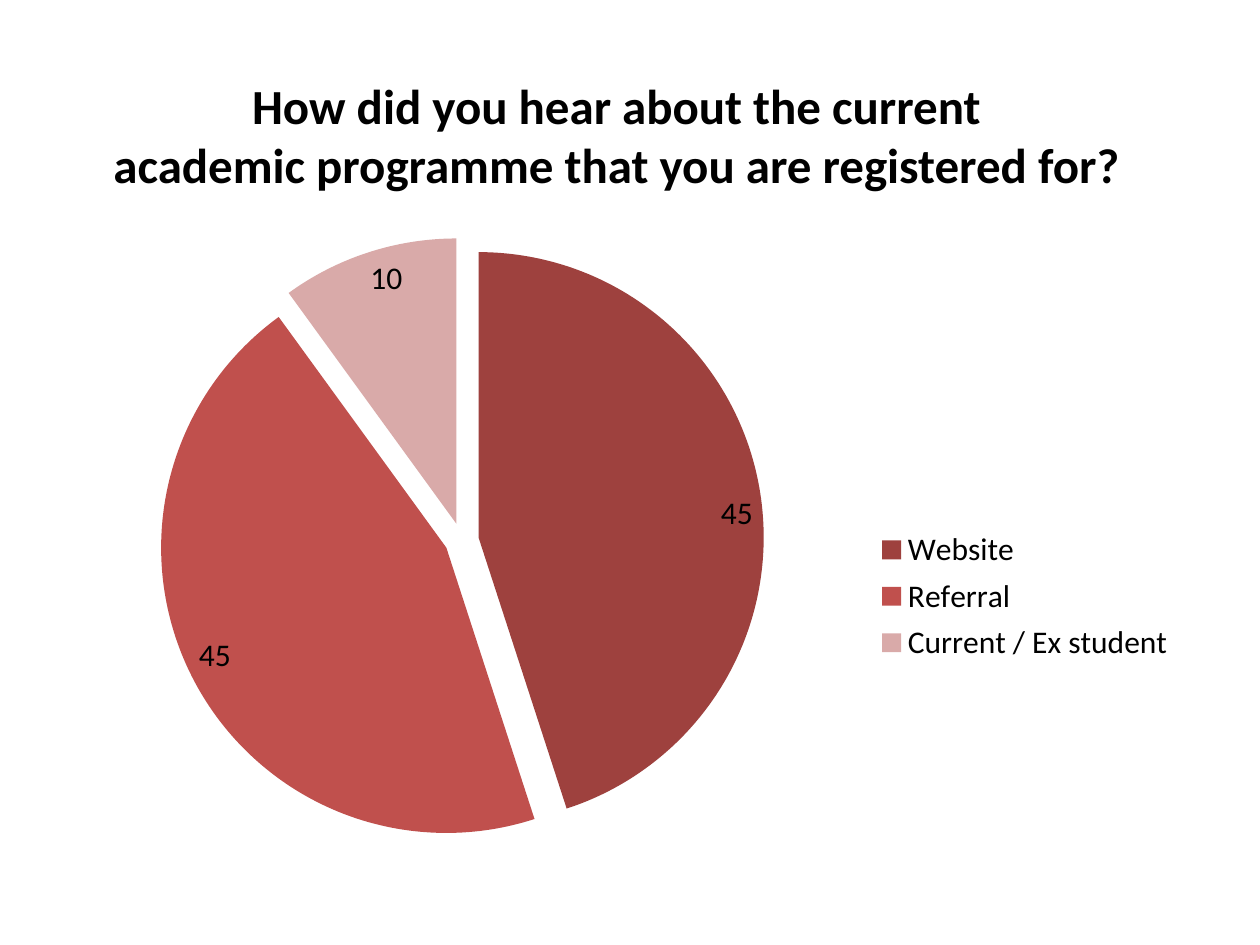
from lxml.etree import SubElement
from pptx import Presentation
from pptx.chart.data import CategoryChartData
from pptx.dml.color import RGBColor
from pptx.enum.chart import XL_CHART_TYPE as ChartType
from pptx.enum.chart import XL_LABEL_POSITION as LabelPosition
from pptx.enum.chart import XL_LEGEND_POSITION as LegendPosition
from pptx.enum.text import MSO_ANCHOR as Anchor
from pptx.enum.text import MSO_AUTO_SIZE as AutoSize
from pptx.enum.text import PP_ALIGN as Align
from pptx.oxml.ns import qn
from pptx.util import Pt

QUESTION = [
    "How did you hear about the current ",
    "academic programme that you are registered for? ",
]
ANSWERS = [
    ("Website", 45, "9E413E"),
    ("Referral", 45, "C0504D"),
    ("Current / Ex student", 10, "D9AAA9"),
]
FONT = "Calibri"
BLACK = "000000"
EXPLOSION = 6

# Left, top, width, height in points
TITLE_BOX = (54, 39.6, 602.6, 74.9)
CHART_BOX = (35.3, 109.4, 643.7, 402.5)
# The same as fractions of the chart
PIE_AREA = (0.1, 0.09, 0.51, 0.81)
LEGEND_AREA = (0.72, 0.47, 0.27, 0.21)


def color(hex_value):
    return RGBColor.from_string(hex_value)


def style_font(font, size, bold=False):
    font.name = FONT
    font.size = Pt(size)
    font.bold = bold
    font.color.rgb = color(BLACK)


def set_layout(parent, area, inner=False):
    """Fix the place of a chart part, given as fractions of the chart."""
    layout = parent.find(qn("c:layout"))
    if layout is None:
        layout = SubElement(parent, qn("c:layout"))
        overlay = parent.find(qn("c:overlay"))
        if overlay is not None:
            overlay.addprevious(layout)
        else:
            parent.insert(0, layout)
    for child in list(layout):
        layout.remove(child)
    manual = SubElement(layout, qn("c:manualLayout"))
    settings = [("layoutTarget", "inner")] if inner else []
    settings += [("xMode", "edge"), ("yMode", "edge")]
    settings += zip("xywh", area)
    for tag, value in settings:
        SubElement(manual, qn(f"c:{tag}")).set("val", str(value))


def add_title(slide):
    title = slide.shapes.title
    title.left, title.top, title.width, title.height = map(Pt, TITLE_BOX)
    frame = title.text_frame
    frame.text = "\n".join(QUESTION)
    frame.word_wrap = False
    frame.auto_size = AutoSize.SHAPE_TO_FIT_TEXT
    frame.vertical_anchor = Anchor.TOP
    for line in frame.paragraphs:
        line.alignment = Align.CENTER
        line.space_before = Pt(0)
        style_font(line.runs[0].font, 28, bold=True)


def add_pie(slide):
    answers, counts, fills = zip(*ANSWERS)
    data = CategoryChartData()
    data.categories = answers
    data.add_series("Series 1", counts)
    chart = slide.shapes.add_chart(
        ChartType.PIE, *map(Pt, CHART_BOX), data
    ).chart
    style_font(chart.font, 18)
    chart.has_title = False
    chart.has_legend = True
    chart.legend.position = LegendPosition.RIGHT
    chart.legend.include_in_layout = False

    plot = chart.plots[0]
    plot.vary_by_categories = True
    plot.has_data_labels = True
    labels = plot.data_labels
    labels.show_value = True
    labels.show_percentage = False
    labels.position = LabelPosition.INSIDE_END

    series = plot.series[0]
    for index, fill in enumerate(fills):
        slice_fill = series.points[index].format.fill
        slice_fill.solid()
        slice_fill.fore_color.rgb = color(fill)
    for point in series._element.findall(qn("c:dPt")):
        explosion = SubElement(point, qn("c:explosion"))
        explosion.set("val", str(EXPLOSION))
        point.find(qn("c:spPr")).addprevious(explosion)

    plot_area = chart._chartSpace.chart.plotArea
    set_layout(plot_area, PIE_AREA, inner=True)
    set_layout(chart.legend._element, LEGEND_AREA)


def main():
    deck = Presentation()
    deck.slide_width, deck.slide_height = Pt(720), Pt(540)
    slide = deck.slides.add_slide(deck.slide_layouts[5])
    add_pie(slide)
    add_title(slide)
    deck.save("out.pptx")


if __name__ == "__main__":
    main()
